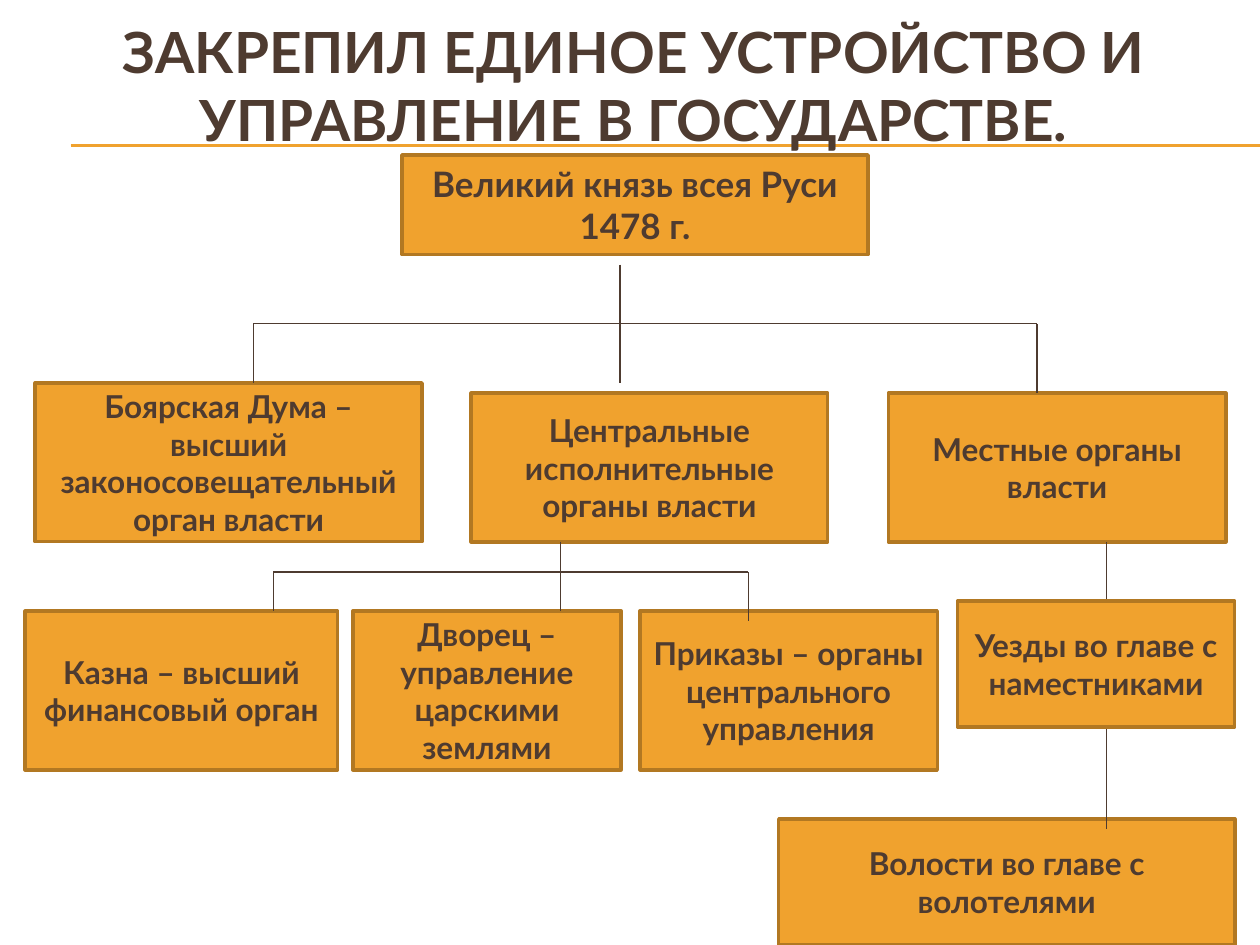
from dataclasses import dataclass
from lxml import etree
from pptx import Presentation
from pptx import util as u
from pptx.dml.color import RGBColor
from pptx.enum import shapes, text
from pptx.oxml.ns import qn


@dataclass(frozen=True)
class Theme:
    font: str = "Lato"
    ink: str = "4E3B30"
    fill: str = "F0A22E"
    edge: str = "B27822"
    title: float = 32.4
    head: float = 20
    body: float = 18
    rule: float = 0.75
    thin: float = 0.79
    frame: float = 2


THEME = Theme()
COLS, ROWS = 100, 75
WIDE, HIGH = u.Inches(10), u.Inches(7.5)


def color(code):
    return RGBColor.from_string(code)


def grid(left, top, cols, rows):
    cell_w, cell_h = WIDE / COLS, HIGH / ROWS
    return [u.Emu(round(n)) for n in
            (left * cell_w, top * cell_h, cols * cell_w, rows * cell_h)]


def write(shape, words, size=THEME.body, ink=THEME.ink, bold=True):
    frame = shape.text_frame
    frame.word_wrap = True
    frame.vertical_anchor = text.MSO_ANCHOR.MIDDLE
    for i, line in enumerate(words.split("\n")):
        para = frame.add_paragraph() if i else frame.paragraphs[0]
        para.alignment = text.PP_ALIGN.CENTER
        run = para.add_run()
        run.text = line
        run.font.name = THEME.font
        run.font.size = u.Pt(size)
        run.font.bold = bold
        run.font.color.rgb = color(ink)


def box(slide, area, words, **style):
    shape = slide.shapes.add_shape(shapes.MSO_SHAPE.RECTANGLE, *grid(*area))
    shape.shadow.inherit = False
    shape.fill.solid()
    shape.fill.fore_color.rgb = color(THEME.fill)
    shape.line.color.rgb = color(THEME.edge)
    shape.line.width = u.Pt(THEME.frame)
    write(shape, words, **style)


def link(slide, ends, ink=THEME.ink, width=THEME.thin):
    line = slide.shapes.add_connector(shapes.MSO_CONNECTOR.STRAIGHT, *grid(*ends))
    line.line.color.rgb = color(ink)
    line.line.width = u.Pt(width)
    etree.SubElement(line._element.spPr, qn("a:effectLst"))


def main():
    deck = Presentation()
    deck.slide_width, deck.slide_height = WIDE, HIGH
    slide = deck.slides.add_slide(deck.slide_layouts[6])

    for row in (11.5, 11.6):
        link(slide, (5.6, row, COLS, row), ink=THEME.fill, width=THEME.rule)
    title = slide.shapes.add_textbox(*grid(2.8, 2.1, 95, 9.2))
    write(title, "ЗАКРЕПИЛ ЕДИНОЕ УСТРОЙСТВО И УПРАВЛЕНИЕ В ГОСУДАРСТВЕ.",
          size=THEME.title)

    box(slide, (31.9, 12.3, 37, 7.9), "Великий князь всея Руси\n1478 г.",
        size=THEME.head)

    duma, organ, base, unit = 30.4, 31.2, 43, 48.5
    box(slide, (2.8, duma, 30.7, base - duma),
        "Боярская Дума – высший законосовещательный орган власти")
    for left, cols, words in (
        (37.4, 28.3, "Центральные исполнительные органы власти"),
        (70.5, 26.8, "Местные органы власти"),
    ):
        box(slide, (left, organ, cols, base - organ), words)
    for left, cols, words in (
        (2, 24.8, "Казна – высший финансовый орган"),
        (28, 21.3, "Дворец – управление царскими землями"),
        (50.8, 23.6, "Приказы – органы центрального управления"),
    ):
        box(slide, (left, unit, cols, 12.6), words)
    box(slide, (61.8, 65, 36.2, 10), "Волости во главе с волотелями")

    upper, lower, county = 25.7, 45.4, 47.7
    for left, right, row in ((20.1, 82.3, upper), (21.7, 59.4, lower)):
        link(slide, (left, row, right, row))
    for col, top, end in (
        (49.2, 21, duma), (20.1, upper, duma), (82.3, upper, organ),
        (21.7, lower, unit), (44.5, base, unit), (59.4, lower, 49.3),
        (87.8, base, 65.8),
    ):
        link(slide, (col, top, col, end))
    box(slide, (76, county, 22, 10), "Уезды во главе с наместниками")

    deck.save("out.pptx")


if __name__ == "__main__":
    main()
